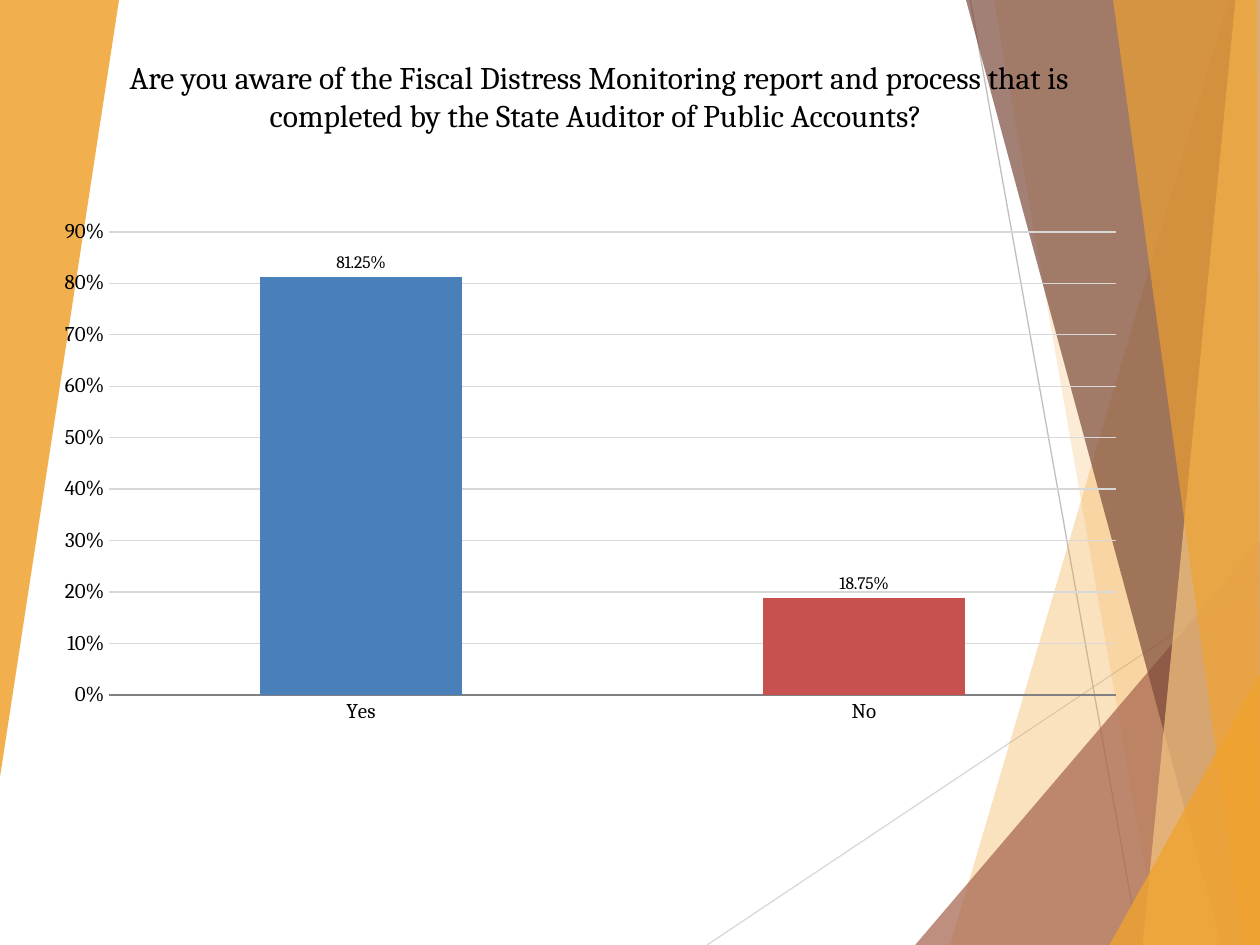
from lxml.etree import SubElement
from pptx import Presentation
from pptx.chart.data import CategoryChartData
from pptx.dml.color import RGBColor
from pptx.enum.chart import XL_CHART_TYPE, XL_LABEL_POSITION, XL_TICK_MARK
from pptx.enum.shapes import MSO_CONNECTOR
from pptx.enum.text import MSO_ANCHOR, MSO_AUTO_SIZE, PP_ALIGN
from pptx.oxml.ns import qn
from pptx.util import Pt

AMBER = RGBColor(0xF0, 0xA2, 0x2E)
PALE_AMBER = RGBColor(0xF6, 0xC7, 0x82)
RUST = RGBColor(0xA5, 0x64, 0x4E)
BROWN = RGBColor(0x7C, 0x4B, 0x3B)
BLUE = RGBColor(0x49, 0x80, 0xBA)
RED = RGBColor(0xC6, 0x51, 0x4E)
BLACK = RGBColor(0, 0, 0)
AXIS_GREY = RGBColor(0x80, 0x80, 0x80)
GRID_GREY = RGBColor(0xD8, 0xD8, 0xD8)
LIGHT_GREY = RGBColor(0xD9, 0xD9, 0xD9)
MID_GREY = RGBColor(0xBF, 0xBF, 0xBF)

FONT = "Cambria"
WIDTH, HEIGHT = 720, 540
QUESTION = (
    "Are you aware of the Fiscal Distress Monitoring report and process "
    "that is completed by the State Auditor of Public Accounts? "
)
ANSWERS = [("Yes", 0.8125, BLUE), ("No", 0.1875, RED)]
PLOT_LAYOUT = {"x": 0.06, "y": 0.042, "w": 0.92, "h": 0.882}

RAYS = [
    ((404, HEIGHT), (WIDTH, 329), LIGHT_GREY),
    ((554.5, 0), (651, HEIGHT), MID_GREY),
]
FACETS = [
    ([(702, 0), (543, HEIGHT), (WIDTH, HEIGHT), (WIDTH, 0)], AMBER, 30),
    ([(567.5, 0), (661.5, HEIGHT), (WIDTH, HEIGHT), (WIDTH, 0)], AMBER, 20),
    ([(523, HEIGHT), (WIDTH, 309), (WIDTH, HEIGHT)], RUST, 72),
    ([(552, 0), (698, HEIGHT), (WIDTH, HEIGHT), (WIDTH, 0)], BROWN, 70),
    ([(706.5, 0), (653, HEIGHT), (WIDTH, HEIGHT), (WIDTH, 0)], PALE_AMBER, 70),
    ([(636, 0), (710, HEIGHT), (WIDTH, HEIGHT), (718.5, 0)], AMBER, 65),
    ([(634.5, HEIGHT), (WIDTH, 385), (WIDTH, HEIGHT)], AMBER, 80),
    ([(0, 0), (67.5, 0), (0, 443.5)], AMBER, 85),
]


def add_ray(slide, start, end, color):
    ray = slide.shapes.add_connector(
        MSO_CONNECTOR.STRAIGHT, *(Pt(value) for value in start + end)
    )
    ray.line.color.rgb = color
    ray.line.width = Pt(0.75)
    SubElement(ray.element.spPr, qn("a:effectLst"))


def add_facet(slide, points, color, opacity):
    builder = slide.shapes.build_freeform(*points[0], scale=Pt(1))
    builder.add_line_segments(points[1:], close=True)
    facet = builder.convert_to_shape()
    facet.shadow.inherit = False
    facet.fill.solid()
    facet.fill.fore_color.rgb = color
    facet.line.fill.background()
    fill_color = facet.element.spPr.find(".//" + qn("a:srgbClr"))
    SubElement(fill_color, qn("a:alpha"), val=str(opacity * 1000))


def format_title(slide):
    title = slide.shapes.title
    title.left, title.top, title.width, title.height = Pt(30), Pt(5), Pt(625), Pt(100)
    frame = title.text_frame
    frame.text = QUESTION
    frame.word_wrap = True
    frame.auto_size = MSO_AUTO_SIZE.NONE
    frame.vertical_anchor = MSO_ANCHOR.MIDDLE
    frame.margin_left = frame.margin_right = Pt(12)
    paragraph = frame.paragraphs[0]
    paragraph.alignment = PP_ALIGN.CENTER
    paragraph.font.name = FONT
    paragraph.font.size = Pt(18)
    paragraph.font.color.rgb = BLACK
    slide.shapes.element.append(title.element)


def place_plot(chart):
    plot_area = chart.element.find(".//" + qn("c:plotArea"))
    layout = plot_area.find(qn("c:layout"))
    if layout is None:
        layout = SubElement(plot_area, qn("c:layout"))
        plot_area.insert(0, layout)
    manual = SubElement(layout, qn("c:manualLayout"))
    SubElement(manual, qn("c:layoutTarget"), val="inner")
    for side in "xy":
        SubElement(manual, qn(f"c:{side}Mode"), val="edge")
    for name, share in PLOT_LAYOUT.items():
        SubElement(manual, qn(f"c:{name}"), val=str(share))


def add_answer_chart(slide):
    data = CategoryChartData(number_format="0.00%")
    data.categories = [name for name, _, _ in ANSWERS]
    data.add_series("Series 1", [share for _, share, _ in ANSWERS])
    chart = slide.shapes.add_chart(
        XL_CHART_TYPE.COLUMN_CLUSTERED, Pt(25), Pt(120), Pt(625), Pt(300), data
    ).chart
    chart.has_title = False
    chart.has_legend = False
    chart.font.name = FONT
    chart.font.size = Pt(18)
    chart.font.color.rgb = BLACK
    place_plot(chart)

    for axis in (chart.category_axis, chart.value_axis):
        axis.major_tick_mark = axis.minor_tick_mark = XL_TICK_MARK.NONE
        axis.tick_labels.font.size = Pt(12)
    category_line = chart.category_axis.format.line
    category_line.color.rgb = AXIS_GREY
    category_line.width = Pt(0.75)

    value_axis = chart.value_axis
    value_axis.minimum_scale, value_axis.maximum_scale = 0, 0.9
    value_axis.major_unit = 0.1
    value_axis.tick_labels.number_format = "0%"
    value_axis.tick_labels.number_format_is_linked = False
    value_axis.format.line.fill.background()
    value_axis.major_gridlines.format.line.color.rgb = GRID_GREY
    value_axis.major_gridlines.format.line.width = Pt(0.75)

    plot = chart.plots[0]
    plot.gap_width = 150
    plot.vary_by_categories = False
    series = plot.series[0]
    for index, (_, _, color) in enumerate(ANSWERS):
        fill = series.points[index].format.fill
        fill.solid()
        fill.fore_color.rgb = color
    labels = series.data_labels
    labels.show_value = True
    labels.number_format = "0.00%"
    labels.number_format_is_linked = False
    labels.position = XL_LABEL_POSITION.OUTSIDE_END
    labels.font.name = FONT
    labels.font.size = Pt(10)
    labels.font.color.rgb = BLACK


def main():
    presentation = Presentation()
    presentation.slide_width, presentation.slide_height = Pt(WIDTH), Pt(HEIGHT)
    slide = presentation.slides.add_slide(presentation.slide_layouts[5])
    for start, end, color in RAYS:
        add_ray(slide, start, end, color)
    for points, color, opacity in FACETS:
        add_facet(slide, points, color, opacity)
    format_title(slide)
    add_answer_chart(slide)
    presentation.save("out.pptx")


if __name__ == "__main__":
    main()
